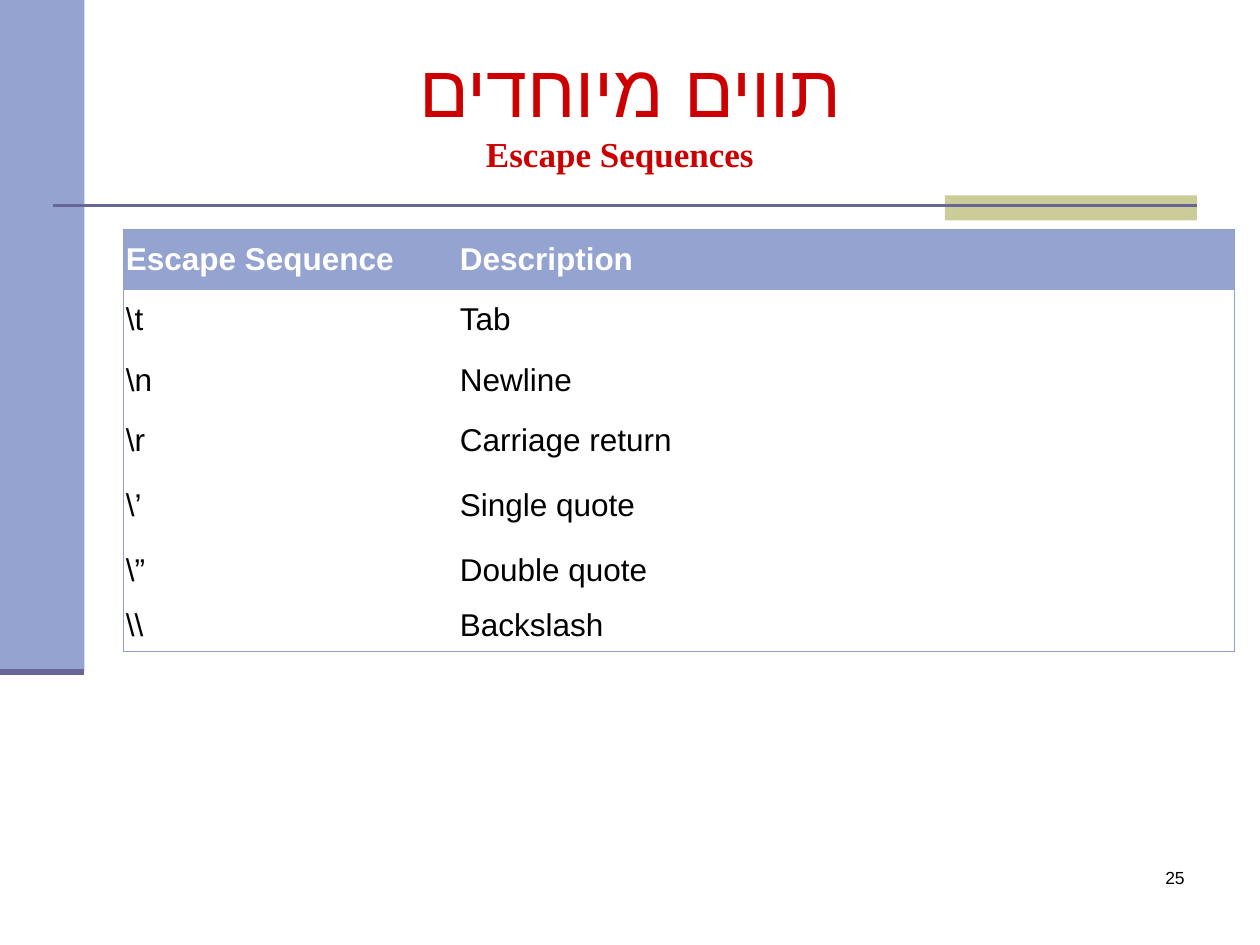
from dataclasses import dataclass

from lxml.etree import SubElement
from pptx import Presentation
from pptx.dml.color import RGBColor
from pptx.enum.shapes import MSO_CONNECTOR, MSO_SHAPE
from pptx.enum.text import MSO_ANCHOR, PP_ALIGN
from pptx.oxml.ns import qn
from pptx.util import Inches, Pt


@dataclass(frozen=True)
class Theme:
    band: str = "95A3D1"
    accent: str = "CCCC99"
    rule: str = "666699"
    border: str = "909FCE"
    title: str = "CC0000"
    text: str = "000000"
    white: str = "FFFFFF"
    body_font: str = "Arial"
    title_font: str = "Times New Roman"
    title_size: float = 42
    subtitle_size: float = 20
    table_size: float = 18
    number_size: float = 10


THEME = Theme()
PLAIN_TABLE_STYLE = "{2D5ABB26-0587-4C30-8999-92F81FD0307C}"
COLUMN_WIDTHS = (2.65, 6.17)
ROW_HEIGHTS = (0.48, 0.48, 0.48, 0.48, 0.55, 0.47, 0.41)
ESCAPE_ROWS = (
    ("Escape Sequence", "Description"),
    (r"\t", "Tab"),
    (r"\n", "Newline"),
    (r"\r", "Carriage return"),
    (r"\’", "Single quote"),
    (r"\”", "Double quote"),
    (r"\\", "Backslash"),
)


def add_text(para, text, *, size, color=THEME.text, font=THEME.body_font,
             bold=False, align=PP_ALIGN.LEFT, complex_font=None):
    para.alignment = align
    span = para.add_run()
    span.text = text
    span.font.size = Pt(size)
    span.font.name = font
    span.font.bold = bold
    span.font.color.rgb = RGBColor.from_string(color)
    if complex_font:
        SubElement(span.font._element, qn("a:cs"), typeface=complex_font)


def set_frame(frame, anchor, margins):
    frame.word_wrap = True
    frame.vertical_anchor = anchor
    frame.margin_left = frame.margin_right = Inches(margins[0])
    frame.margin_top = frame.margin_bottom = Inches(margins[1])


def add_block(page, left, top, width, height, color):
    block = page.shapes.add_shape(MSO_SHAPE.RECTANGLE, Inches(left), Inches(top),
                                  Inches(width), Inches(height))
    block.shadow.inherit = False
    block.fill.solid()
    block.fill.fore_color.rgb = RGBColor.from_string(color)
    block.line.fill.background()


def add_rule(page, left, right, top, weight):
    rule = page.shapes.add_connector(MSO_CONNECTOR.STRAIGHT, Inches(left), Inches(top),
                                     Inches(right), Inches(top))
    rule.line.color.rgb = RGBColor.from_string(THEME.rule)
    rule.line.width = Pt(weight)
    SubElement(rule._element.spPr, qn("a:effectLst"))


def add_title(page):
    title = page.shapes.title
    title.left, title.top = Inches(0.67), Inches(0.44)
    title.width, title.height = Inches(8.5), Inches(0.85)
    set_frame(title.text_frame, MSO_ANCHOR.MIDDLE, (0.1, 0.05))
    para = title.text_frame.paragraphs[0]
    look = dict(color=THEME.title, font=THEME.title_font, align=PP_ALIGN.CENTER)
    add_text(para, "תווים מיוחדים ", size=THEME.title_size,
             complex_font=THEME.body_font, **look)
    para.add_line_break()
    add_text(para, "Escape Sequences", size=THEME.subtitle_size, bold=True, **look)
    para._p.get_or_add_pPr().set("rtl", "1")


def set_borders(cell, sides):
    """Draw the named sides; the lines must come before the fill in the cell."""
    properties = cell._tc.get_or_add_tcPr()
    for side in sides:
        line = SubElement(properties, qn(f"a:ln{side}"), w=str(Pt(0.75)))
        fill = SubElement(line, qn("a:solidFill"))
        SubElement(fill, qn("a:srgbClr"), val=THEME.border)


def outer_sides(row, column):
    edges = {"L": column == 0, "R": column == len(COLUMN_WIDTHS) - 1,
             "T": row == 0, "B": row == len(ROW_HEIGHTS) - 1}
    return [side for side, is_outer in edges.items() if is_outer]


def add_escape_table(page):
    frame = page.shapes.add_table(len(ROW_HEIGHTS), len(COLUMN_WIDTHS),
                                  Inches(0.98), Inches(1.82),
                                  Inches(sum(COLUMN_WIDTHS)), Inches(sum(ROW_HEIGHTS)))
    table = frame.table
    table.horz_banding = False
    table._tbl.tblPr.find(qn("a:tableStyleId")).text = PLAIN_TABLE_STYLE
    for column, width in zip(table.columns, COLUMN_WIDTHS):
        column.width = Inches(width)
    for row, height in zip(table.rows, ROW_HEIGHTS):
        row.height = Inches(height)
    for row, texts in enumerate(ESCAPE_ROWS):
        header = row == 0
        for column, text in enumerate(texts):
            cell = table.cell(row, column)
            cell.vertical_anchor = MSO_ANCHOR.MIDDLE
            cell.margin_left = cell.margin_right = Inches(0.02)
            cell.margin_top = cell.margin_bottom = Inches(0.02)
            set_borders(cell, outer_sides(row, column))
            cell.fill.solid()
            cell.fill.fore_color.rgb = RGBColor.from_string(
                THEME.band if header else THEME.white)
            add_text(cell.text_frame.paragraphs[0], text, size=THEME.table_size,
                     color=THEME.white if header else THEME.text, bold=header)


def add_page_number(page, number):
    box = page.shapes.add_textbox(Inches(7.42), Inches(6.83), Inches(2.08), Inches(0.5))
    set_frame(box.text_frame, MSO_ANCHOR.TOP, (0.1, 0.05))
    add_text(box.text_frame.paragraphs[0], number, size=THEME.number_size,
             align=PP_ALIGN.RIGHT)


def main():
    deck = Presentation()
    deck.slide_width, deck.slide_height = Inches(10), Inches(7.5)
    page = deck.slides.add_slide(deck.slide_layouts[5])
    add_block(page, 0, 0, 0.67, 5.33, THEME.band)
    add_block(page, 7.5, 1.55, 2, 0.2, THEME.accent)
    add_rule(page, 0.42, 9.5, 1.63, 1.5)
    add_rule(page, 0, 0.67, 5.33, 3.5)
    add_title(page)
    add_page_number(page, "25")
    add_escape_table(page)
    deck.save("out.pptx")


if __name__ == "__main__":
    main()
